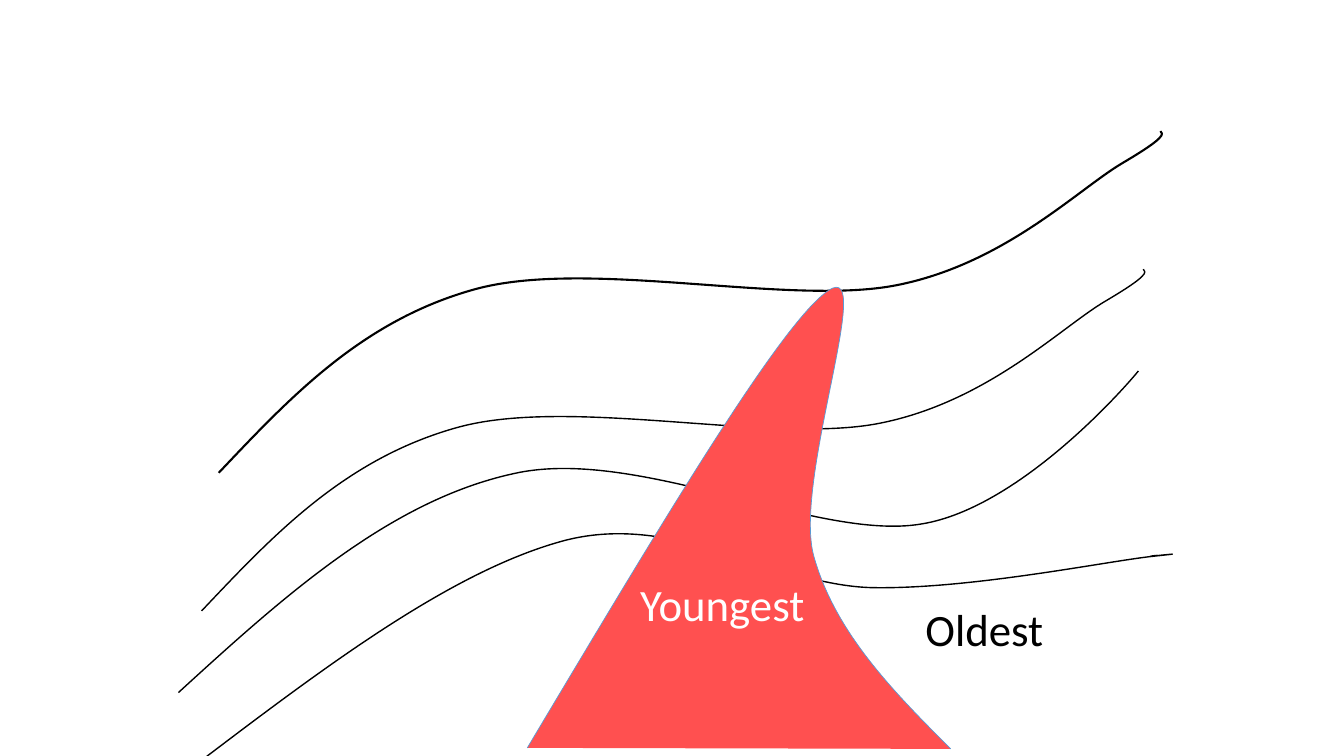
from dataclasses import dataclass
from typing import Optional

from lxml.etree import SubElement
from pptx import Presentation
from pptx.dml.color import RGBColor
from pptx.enum.text import MSO_AUTO_SIZE
from pptx.oxml.ns import qn
from pptx.util import Inches, Pt

Point = tuple[float, float]


@dataclass(frozen=True)
class Theme:
    font: str = "Calibri"
    label_size: int = 32
    black: RGBColor = RGBColor(0x00, 0x00, 0x00)
    white: RGBColor = RGBColor(0xFF, 0xFF, 0xFF)
    magma: RGBColor = RGBColor(0xFF, 0x50, 0x50)
    magma_edge: RGBColor = RGBColor(0x5B, 0x9B, 0xD5)


@dataclass(frozen=True)
class Curve:
    """A start point, then two handles and an end point per Bezier segment."""
    points: list[Point]
    line_width: float
    line_color: RGBColor
    fill: Optional[RGBColor] = None


THEME = Theme()

# Rock layers, from the surface down
SURFACE = [
    (2.17, 4.69),
    (2.88, 3.94), (3.59, 3.18), (4.71, 2.87),
    (5.83, 2.56), (7.82, 3.04), (8.89, 2.83),
    (9.96, 2.62), (10.69, 1.88), (11.13, 1.62),
    (11.57, 1.36), (11.54, 1.33), (11.51, 1.3),
]
SECOND_LAYER = [(x - 0.17, y + 1.37) for x, y in SURFACE]
THIRD_LAYER = [
    (1.77, 6.87),
    (2.81, 5.92), (3.86, 4.97), (5.09, 4.7),
    (6.31, 4.42), (8.1, 5.37), (9.13, 5.2),
    (10.16, 5.04), (11.28, 3.7), (11.29, 3.68),
]
LOWEST_LAYER = [
    (2.03, 7.52),
    (3.27, 6.58), (4.51, 5.65), (5.61, 5.36),
    (6.71, 5.08), (7.67, 5.8), (8.64, 5.83),
    (9.61, 5.85), (10.97, 5.57), (11.43, 5.52),
    (11.9, 5.47), (11.4, 5.52), (11.41, 5.52),
    (11.41, 5.52), (11.45, 5.51), (11.48, 5.51),
]

# Intrusion cutting through the layers
INTRUSION = [
    (5.23, 7.42),
    (6.49, 5.31), (7.74, 3.2), (8.22, 2.88),
    (8.69, 2.57), (7.87, 4.75), (8.07, 5.51),
    (8.28, 6.27), (8.85, 6.85), (9.43, 7.43),
]

CURVES = [
    Curve(SURFACE, 1.5, THEME.black),
    Curve(SECOND_LAYER, 1, THEME.black),
    Curve(THIRD_LAYER, 1, THEME.black),
    Curve(LOWEST_LAYER, 1, THEME.black),
    Curve(INTRUSION, 0.5, THEME.magma_edge, THEME.magma),
]


def draw_curve(slide, curve: Curve) -> None:
    start, *rest = [(Inches(x), Inches(y)) for x, y in curve.points]
    builder = slide.shapes.build_freeform(*start)
    builder.add_line_segments(rest, close=False)
    outline = builder.convert_to_shape()
    outline.shadow.inherit = False
    outline.line.width = Pt(curve.line_width)
    outline.line.color.rgb = curve.line_color
    if curve.fill is None:
        outline.fill.background()
    else:
        outline.fill.solid()
        outline.fill.fore_color.rgb = curve.fill

    # Turn every three straight steps into one Bezier segment
    path = outline._element.find(".//" + qn("a:path"))
    steps = path.findall(qn("a:lnTo"))
    for i in range(0, len(steps), 3):
        bezier = SubElement(path, qn("a:cubicBezTo"))
        for step in steps[i:i + 3]:
            bezier.append(step[0])
            path.remove(step)


def add_label(slide, text: str, *, left: float, top: float, width: float,
              height: float, color: RGBColor) -> None:
    label = slide.shapes.add_textbox(
        Inches(left), Inches(top), Inches(width), Inches(height))
    frame = label.text_frame
    frame.word_wrap = True
    frame.auto_size = MSO_AUTO_SIZE.SHAPE_TO_FIT_TEXT
    run = frame.paragraphs[0].add_run()
    run.text = text
    run.font.name = THEME.font
    run.font.size = Pt(THEME.label_size)
    run.font.color.rgb = color


def main() -> None:
    deck = Presentation()
    deck.slide_width, deck.slide_height = Inches(13.33), Inches(7.5)
    slide = deck.slides.add_slide(deck.slide_layouts[6])

    # Layers first, the intrusion on top
    for curve in CURVES:
        draw_curve(slide, curve)

    # Age labels
    add_label(slide, "Youngest", left=6.25, top=5.67, width=1.83, height=0.64,
              color=THEME.white)
    add_label(slide, "Oldest", left=9.08, top=5.92, width=2.75, height=0.64,
              color=THEME.black)

    deck.save("out.pptx")


if __name__ == "__main__":
    main()
